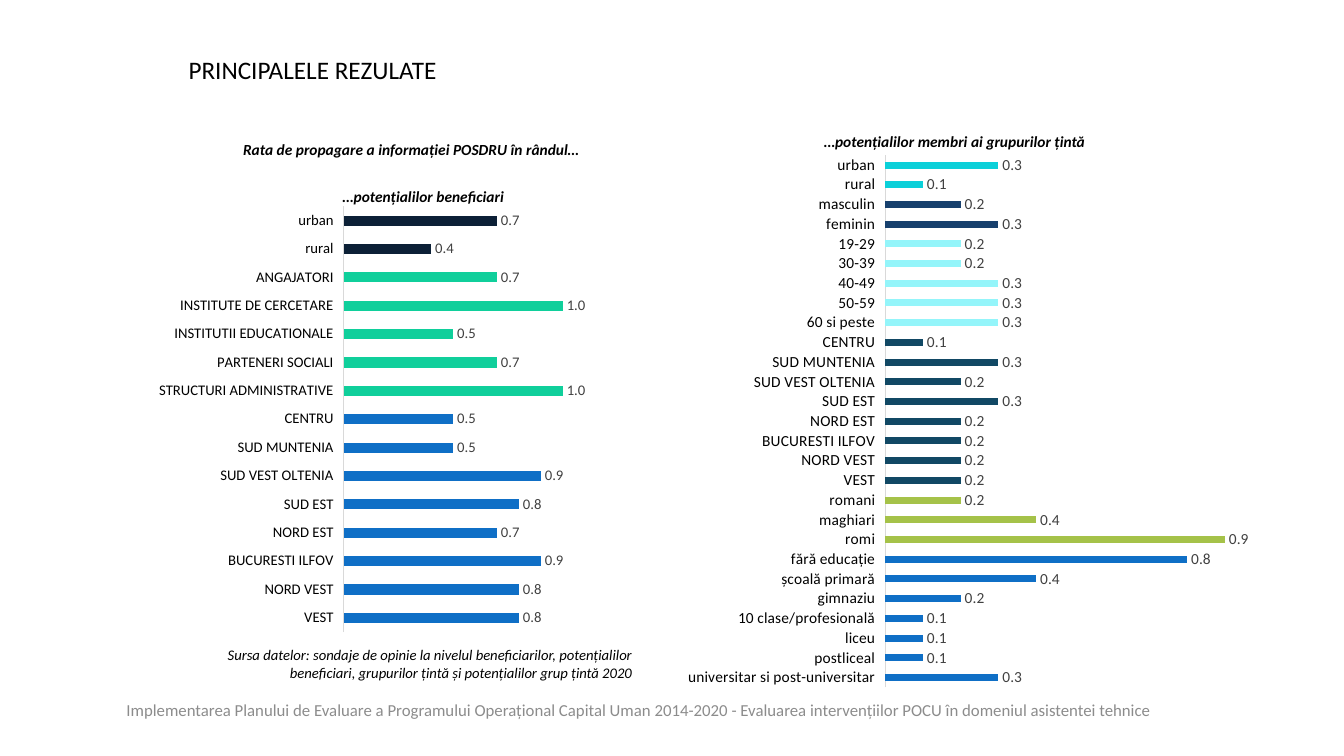
from lxml import etree
from pptx import Presentation
from pptx.chart.data import CategoryChartData
from pptx.dml.color import RGBColor
from pptx.enum.chart import XL_CHART_TYPE, XL_LABEL_POSITION, XL_TICK_LABEL_POSITION, XL_TICK_MARK
from pptx.enum.text import MSO_ANCHOR, PP_ALIGN
from pptx.oxml.ns import qn
from pptx.util import Inches, Pt

FONT = "Calibri"
COLORS = {
    "text": "000000", "label": "404040", "footer": "8C8C8C", "axis": "D9D9D9",
    "blue": "0F6FC6", "night": "0C2036", "green": "10CF9B", "cyan": "0BD0D9",
    "navy": "17406D", "ice": "94F5FA", "petrol": "114864", "lime": "A5C249",
}


def style_font(font, size, color="text", bold=False, italic=False):
    font.name = FONT
    font.size = Pt(size)
    font.bold = bold
    font.italic = italic
    font.color.rgb = RGBColor.from_string(COLORS[color])


def write_text(box, text, size, align, anchor=MSO_ANCHOR.TOP, **style):
    frame = box.text_frame
    frame.word_wrap = True
    frame.vertical_anchor = anchor
    para = frame.paragraphs[0]
    para.alignment = align
    span = para.add_run()
    span.text = text
    style_font(span.font, size, **style)


deck = Presentation()
deck.slide_width = Inches(13.33)
deck.slide_height = Inches(7.5)
page = deck.slides.add_slide(deck.slide_layouts[5])

title = page.shapes.title
title.left, title.top = Inches(1.77), Inches(0.49)
title.width, title.height = Inches(7.17), Inches(0.4)
write_text(title, "PRINCIPALELE REZULATE", 18, PP_ALIGN.LEFT)

# Each group of bars: colour, then (category, value) pairs
beneficiaries = [
    ("night", [("urban", 0.7), ("rural", 0.4)]),
    ("green", [("ANGAJATORI", 0.7), ("INSTITUTE DE CERCETARE", 1.0),
               ("INSTITUTII EDUCATIONALE", 0.5), ("PARTENERI SOCIALI", 0.7),
               ("STRUCTURI ADMINISTRATIVE", 1.0)]),
    ("blue", [("CENTRU", 0.5), ("SUD MUNTENIA", 0.5), ("SUD VEST OLTENIA", 0.9),
              ("SUD EST", 0.8), ("NORD EST", 0.7), ("BUCURESTI ILFOV", 0.9),
              ("NORD VEST", 0.8), ("VEST", 0.8)]),
]
target_members = [
    ("cyan", [("urban", 0.3), ("rural", 0.1)]),
    ("navy", [("masculin", 0.2), ("feminin", 0.3)]),
    ("ice", [("19-29", 0.2), ("30-39", 0.2), ("40-49", 0.3), ("50-59", 0.3),
             ("60 si peste", 0.3)]),
    ("petrol", [("CENTRU", 0.1), ("SUD MUNTENIA", 0.3), ("SUD VEST OLTENIA", 0.2),
                ("SUD EST", 0.3), ("NORD EST", 0.2), ("BUCURESTI ILFOV", 0.2),
                ("NORD VEST", 0.2), ("VEST", 0.2)]),
    ("lime", [("romani", 0.2), ("maghiari", 0.4), ("romi", 0.9)]),
    ("blue", [("fără educație", 0.8), ("școală primară", 0.4), ("gimnaziu", 0.2),
              ("10 clase/profesională", 0.1), ("liceu", 0.1), ("postliceal", 0.1),
              ("universitar si post-universitar", 0.3)]),
]

# Groups, chart position, text size, axis maximum, inner plot area (x, y, w, h)
charts = [
    (beneficiaries, (1.53, 1.96, 4.58, 4.4), 10.5, 1.2, (0.41, 0.02, 0.57, 0.96)),
    (target_members, (6.79, 1.43, 5.85, 5.5), 11, 1.0, (0.34, 0.02, 0.64, 0.96)),
]
for groups, place, size, maximum, plot_area in charts:
    bars = [(name, value, color) for color, pairs in groups for name, value in pairs]
    data = CategoryChartData(number_format="0.0")
    data.categories = [name for name, value, color in bars]
    data.add_series("Series 1", [value for name, value, color in bars])
    chart = page.shapes.add_chart(
        XL_CHART_TYPE.BAR_CLUSTERED, *[Inches(length) for length in place], data).chart
    chart.has_legend = False
    chart.has_title = False
    style_font(chart.font, size)

    category_axis = chart.category_axis
    category_axis.reverse_order = True
    category_axis.major_tick_mark = XL_TICK_MARK.NONE
    category_axis.tick_label_position = XL_TICK_LABEL_POSITION.LOW
    category_axis.format.line.color.rgb = RGBColor.from_string(COLORS["axis"])
    category_axis.format.line.width = Pt(0.75)
    style_font(category_axis.tick_labels.font, size)

    value_axis = chart.value_axis
    value_axis.minimum_scale = 0
    value_axis.maximum_scale = maximum
    value_axis.has_major_gridlines = False
    value_axis.visible = False

    plot = chart.plots[0]
    plot.gap_width = 182
    plot.vary_by_categories = False
    plot.has_data_labels = True
    labels = plot.data_labels
    labels.show_value = True
    labels.number_format = "0.0"
    labels.number_format_is_linked = False
    labels.position = XL_LABEL_POSITION.OUTSIDE_END
    style_font(labels.font, size, color="label")

    series = plot.series[0]
    series.format.fill.solid()
    series.format.fill.fore_color.rgb = RGBColor.from_string(COLORS["blue"])
    for index, (name, value, color) in enumerate(bars):
        if color != "blue":
            fill = series.points[index].format.fill
            fill.solid()
            fill.fore_color.rgb = RGBColor.from_string(COLORS[color])

    plot_xml = chart.element.chart.plotArea
    for old_layout in plot_xml.findall(qn("c:layout")):
        plot_xml.remove(old_layout)
    layout = etree.Element(qn("c:layout"))
    plot_xml.insert(0, layout)
    manual = etree.SubElement(layout, qn("c:manualLayout"))
    settings = [("layoutTarget", "inner"), ("xMode", "edge"), ("yMode", "edge")]
    settings += zip("xywh", plot_area)
    for tag, setting in settings:
        etree.SubElement(manual, qn("c:" + tag)).set("val", str(setting))

heading = {"bold": True, "italic": True}
texts = [
    ("Rata de propagare a informației POSDRU în rândul…",
     (1.58, 1.34, 5, 0.29), 11, PP_ALIGN.CENTER, heading),
    ("…potențialilor beneficiari",
     (2.48, 1.81, 3.44, 0.29), 11, PP_ALIGN.CENTER, heading),
    ("…potențialilor membri ai grupurilor țintă",
     (6.97, 1.26, 5, 0.29), 11, PP_ALIGN.CENTER, heading),
    ("Sursa datelor: sondaje de opinie la nivelul beneficiarilor, potențialilor "
     "beneficiari, grupurilor țintă și potențialilor grup țintă 2020",
     (2.02, 6.36, 4.35, 0.45), 10.5, PP_ALIGN.RIGHT, {"italic": True}),
    ("Implementarea Planului de Evaluare a Programului Operațional Capital Uman "
     "2014-2020 - Evaluarea intervențiilor POCU în domeniul asistentei tehnice",
     (1.04, 6.83, 10.6, 0.42), 12, PP_ALIGN.CENTER,
     {"color": "footer", "anchor": MSO_ANCHOR.MIDDLE}),
]
for text, place, size, align, style in texts:
    box = page.shapes.add_textbox(*[Inches(length) for length in place])
    write_text(box, text, size, align, **style)

deck.save("out.pptx")
